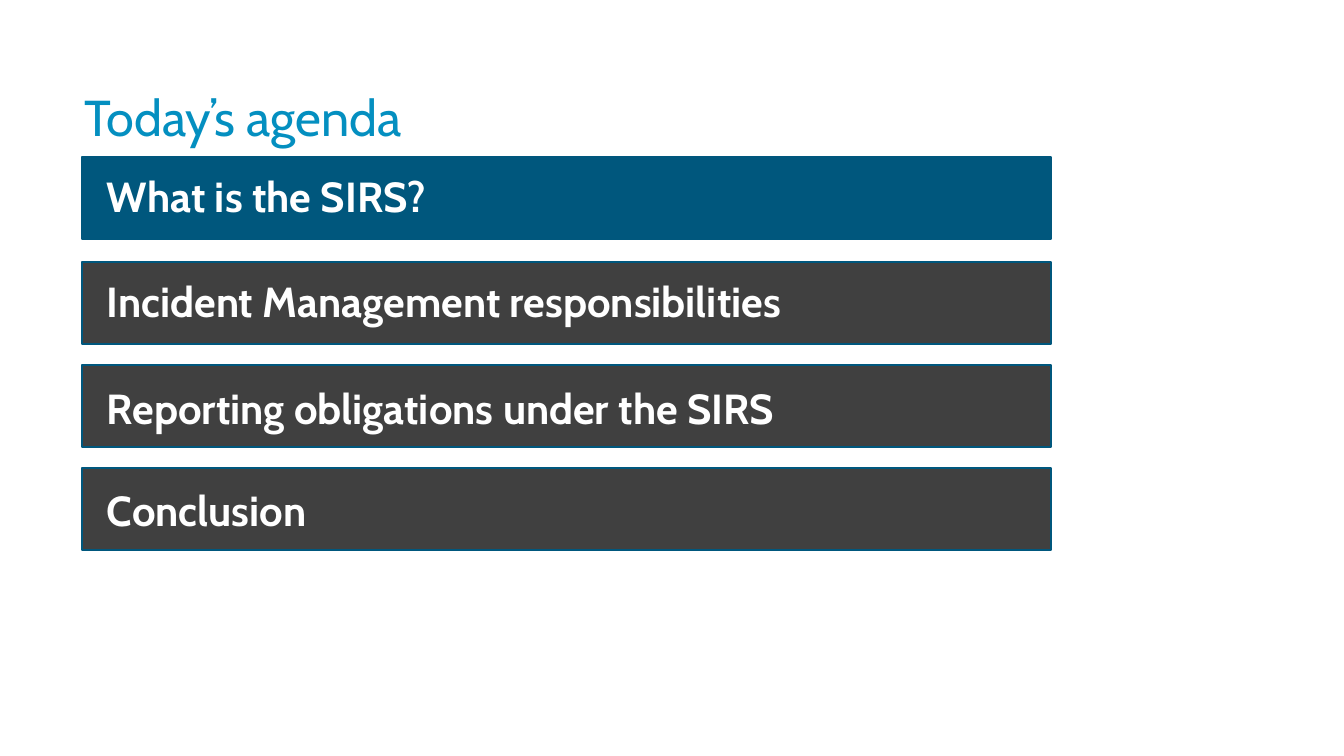
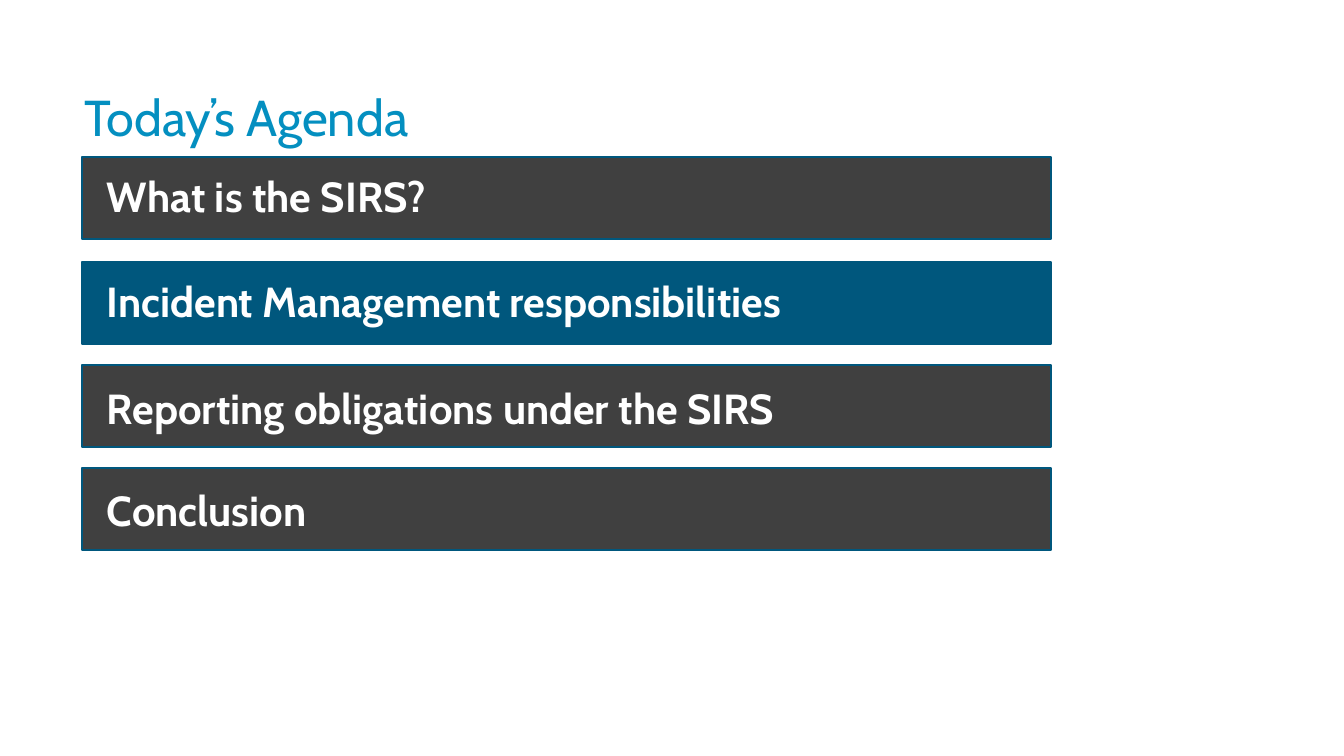
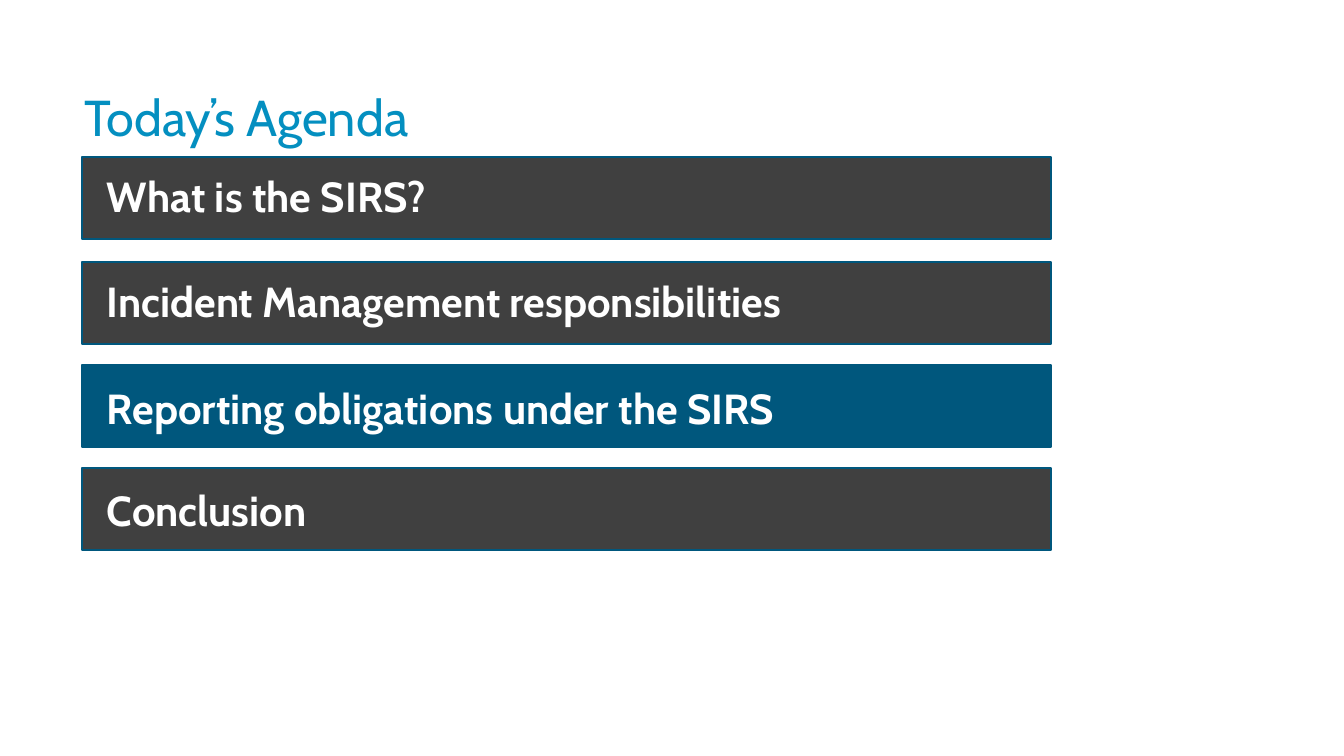
from pptx import Presentation
from pptx.dml.color import RGBColor
from pptx.enum.shapes import MSO_SHAPE
from pptx.enum.text import MSO_ANCHOR, PP_ALIGN
from pptx.util import Pt

AGENDA = [
    ("What is the SIRS?", 157, 14),
    ("Incident Management responsibilities", 262, 14),
    ("Reporting obligations under the SIRS", 365, 18),
    ("Conclusion", 468, 17),
]
SLIDES = [
    ("Today’s agenda", "What is the SIRS?"),
    ("Today’s Agenda", "Incident Management responsibilities"),
    ("Today’s Agenda", "Reporting obligations under the SIRS"),
]

COLORS = {"title": "048FC0", "active": "00577D", "idle": "404040", "text": "FFFFFF"}
FONT = "Cabin"
SLIDE_WIDTH, SLIDE_HEIGHT = 1344, 756
TITLE_BOX = (84, 91, 1067, 59)
BAR_LEFT, BAR_WIDTH, BAR_HEIGHT, BAR_INDENT = 82, 969, 82, 25


def px(length):
    return round(length * 12192000 / SLIDE_WIDTH)


def color(name):
    return RGBColor.from_string(COLORS[name])


def set_text(shape, text, size, color_name, bold, left=0, top=0, anchor=MSO_ANCHOR.TOP):
    frame = shape.text_frame
    frame.word_wrap = True
    frame.vertical_anchor = anchor
    frame.margin_left, frame.margin_top = px(left), px(top)
    frame.margin_right = frame.margin_bottom = 0
    paragraph = frame.paragraphs[0]
    paragraph.text = text
    paragraph.alignment = PP_ALIGN.LEFT
    paragraph.font.name = FONT
    paragraph.font.size = Pt(size)
    paragraph.font.bold = bold
    paragraph.font.color.rgb = color(color_name)
    return paragraph


def add_title(slide, text):
    box = slide.shapes.add_textbox(*map(px, TITLE_BOX))
    paragraph = set_text(box, text, 36, "title", False, anchor=MSO_ANCHOR.MIDDLE)
    paragraph.line_spacing = 0.9


def add_bar(slide, text, top, text_top, active):
    bar = slide.shapes.add_shape(
        MSO_SHAPE.RECTANGLE, *map(px, (BAR_LEFT, top, BAR_WIDTH, BAR_HEIGHT)))
    bar.shadow.inherit = False
    bar.fill.solid()
    bar.fill.fore_color.rgb = color("active" if active else "idle")
    bar.line.color.rgb = color("active")
    bar.line.width = Pt(1)
    set_text(bar, text, 30, "text", True, BAR_INDENT, text_top)


def main():
    presentation = Presentation()
    presentation.slide_width = px(SLIDE_WIDTH)
    presentation.slide_height = px(SLIDE_HEIGHT)
    for title, current in SLIDES:
        slide = presentation.slides.add_slide(presentation.slide_layouts[6])
        add_title(slide, title)
        for text, top, text_top in AGENDA:
            add_bar(slide, text, top, text_top, text == current)
    presentation.save("out.pptx")


if __name__ == "__main__":
    main()
